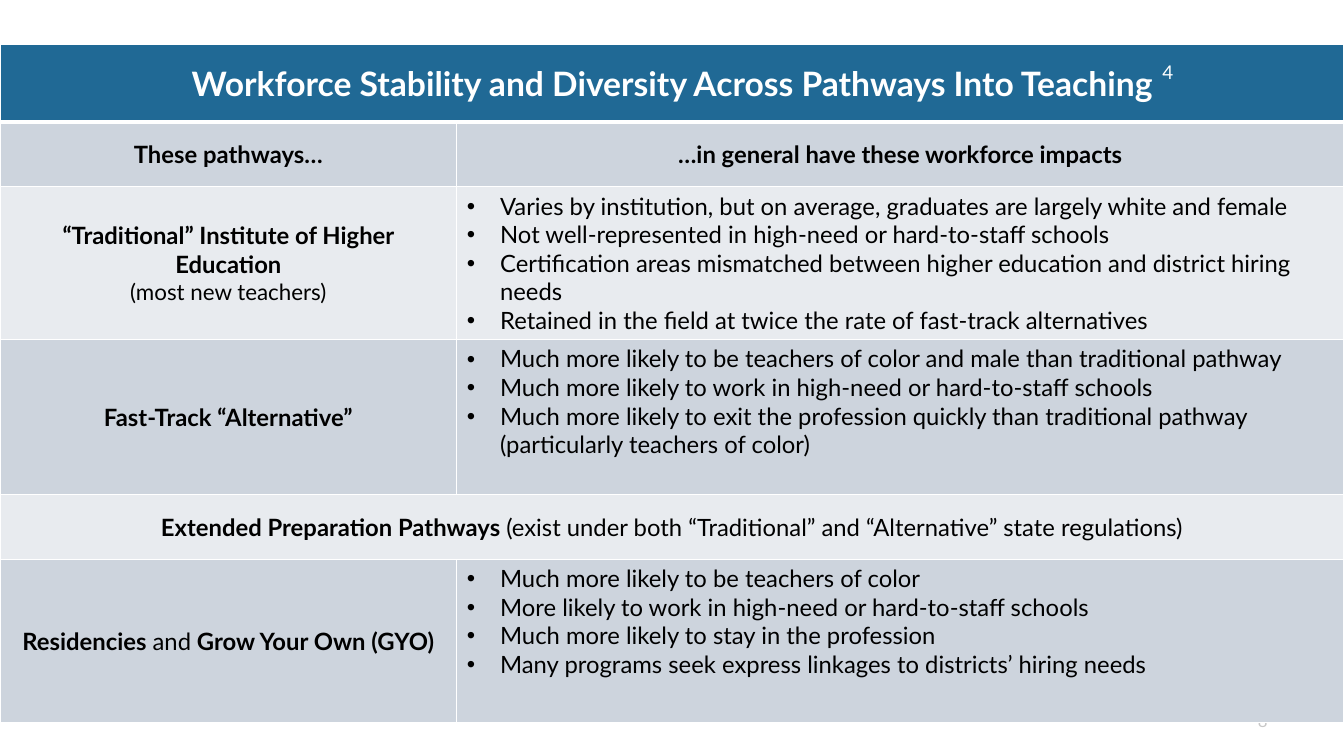
from lxml import etree
from pptx import Presentation
from pptx import util as u
from pptx.dml.color import RGBColor
from pptx.enum import text
from pptx.oxml import ns

WHITE = RGBColor(0xFF, 0xFF, 0xFF)
BLACK = RGBColor(0, 0, 0)
BLUE = RGBColor(0x20, 0x69, 0x95)
DARK_BAND = RGBColor(0xCD, 0xD4, 0xDD)
LIGHT_BAND = RGBColor(0xE8, 0xEB, 0xEF)
GRAY = RGBColor(0xC8, 0xC8, 0xC8)

COLUMNS = [4.53, 8.8]
HEIGHTS = [0.77, 0.64, 1.5, 1.54, 0.64, 1.62]
BODY = {"size": u.Pt(17), "bold": False}
BOLD = {"size": u.Pt(17), "bold": True}
SMALL = {"size": u.Pt(16), "bold": False}
TITLE = {"size": u.Pt(24), "bold": True, "color": WHITE}

ROWS = [
    ([[("Workforce Stability and Diversity Across Pathways Into Teaching", TITLE)]], None),
    ([[("These pathways…", BOLD)]], [[("…in general have these workforce impacts", BOLD)]]),
    ([[("“Traditional” Institute of Higher Education", BOLD)], [("(most new teachers)", SMALL)]], [
        "Varies by institution, but on average, graduates are largely white and female",
        "Not well-represented in high-need or hard-to-staff schools",
        "Certification areas mismatched between higher education and district hiring needs",
        "Retained in the field at twice the rate of fast-track alternatives",
    ]),
    ([[("Fast-Track “Alternative”", BOLD)]], [
        "Much more likely to be teachers of color and male than traditional pathway",
        "Much more likely to work in high-need or hard-to-staff schools",
        "Much more likely to exit the profession quickly than traditional pathway "
        "(particularly teachers of color)",
    ]),
    ([[("Extended Preparation Pathways ", BOLD),
       ("(exist under both “Traditional” and “Alternative” state regulations)", BODY)]], None),
    ([[("Residencies ", BOLD), ("and", BODY), (" Grow Your Own (GYO)", BOLD)]], [
        "Much more likely to be teachers of color",
        "More likely to work in high-need or hard-to-staff schools",
        "Much more likely to stay in the profession",
        "Many programs seek express linkages to districts’ hiring needs",
    ]),
]


def add_run(p, words, formats):
    r = p.add_run()
    r.text = words
    r.font.name = "Lato"
    r.font.color.rgb = formats.get("color", BLACK)
    for name, value in formats.items():
        if name != "color":
            setattr(r.font, name, value)


def add_bullet(p):
    pPr = p._p.get_or_add_pPr()
    indent = u.Inches(0.33)
    pPr.set("marL", str(indent))
    pPr.set("indent", str(-indent))
    etree.SubElement(pPr, ns.qn("a:buFont")).set("typeface", "Arial")
    etree.SubElement(pPr, ns.qn("a:buChar")).set("char", "•")


def set_borders(cell, widths):
    tcPr = cell._tc.get_or_add_tcPr()
    for i, (side, width) in enumerate(widths.items()):
        ln = etree.Element(ns.qn(f"a:ln{side}"), w=str(u.Pt(width)))
        fill = etree.SubElement(ln, ns.qn("a:solidFill"))
        etree.SubElement(fill, ns.qn("a:srgbClr")).set("val", str(WHITE))
        tcPr.insert(i, ln)


def fill_cell(cell, paragraphs):
    tf = cell.text_frame
    for i, content in enumerate(paragraphs):
        p = tf.add_paragraph() if i else tf.paragraphs[0]
        if isinstance(content, str):
            add_bullet(p)
            add_run(p, content, BODY)
        else:
            cell.vertical_anchor = text.MSO_ANCHOR.MIDDLE
            p.alignment = text.PP_ALIGN.CENTER
            for words, formats in content:
                add_run(p, words, formats)


def add_pathway_table(s, left, top):
    frame = s.shapes.add_table(len(ROWS), len(COLUMNS), u.Inches(left), u.Inches(top),
                               u.Inches(sum(COLUMNS)), u.Inches(sum(HEIGHTS)))
    table = frame.table
    table.first_row = table.horz_banding = False
    for column, width in zip(table.columns, COLUMNS):
        column.width = u.Inches(width)
    for i, (pathway, impacts) in enumerate(ROWS):
        table.rows[i].height = u.Inches(HEIGHTS[i])
        band = DARK_BAND if i % 2 else LIGHT_BAND
        for j in range(len(COLUMNS)):
            cell = table.cell(i, j)
            cell.fill.solid()
            cell.fill.fore_color.rgb = band if i else BLUE
            set_borders(cell, {"L": 1, "R": 1, "T": 3 if i == 1 else 1, "B": 1 if i else 3})
        fill_cell(table.cell(i, 0), pathway)
        if impacts:
            fill_cell(table.cell(i, 1), impacts)
        else:
            table.cell(i, 0).merge(table.cell(i, 1))


def add_label(s, words, box, formats, frame_formats, alignment):
    tf = s.shapes.add_textbox(*map(u.Inches, box)).text_frame
    for name, value in frame_formats.items():
        setattr(tf, name, value)
    p = tf.paragraphs[0]
    p.alignment = alignment
    add_run(p, words, formats)


def main():
    prs = Presentation()
    prs.slide_width, prs.slide_height = u.Inches(13.33), u.Inches(7.5)
    s = prs.slides.add_slide(prs.slide_layouts[6])
    add_label(s, "8", (9.56, 6.95, 3.11, 0.4), {"size": u.Pt(12), "color": GRAY},
              {"word_wrap": True, "vertical_anchor": text.MSO_ANCHOR.MIDDLE},
              text.PP_ALIGN.RIGHT)
    add_pathway_table(s, 0, 0.44)
    add_label(s, "4", (11.43, 0.55, 0.31, 0.33), {"size": u.Pt(13.5), "color": WHITE},
              {"word_wrap": False, "auto_size": text.MSO_AUTO_SIZE.SHAPE_TO_FIT_TEXT},
              text.PP_ALIGN.LEFT)
    prs.save("out.pptx")


if __name__ == "__main__":
    main()
